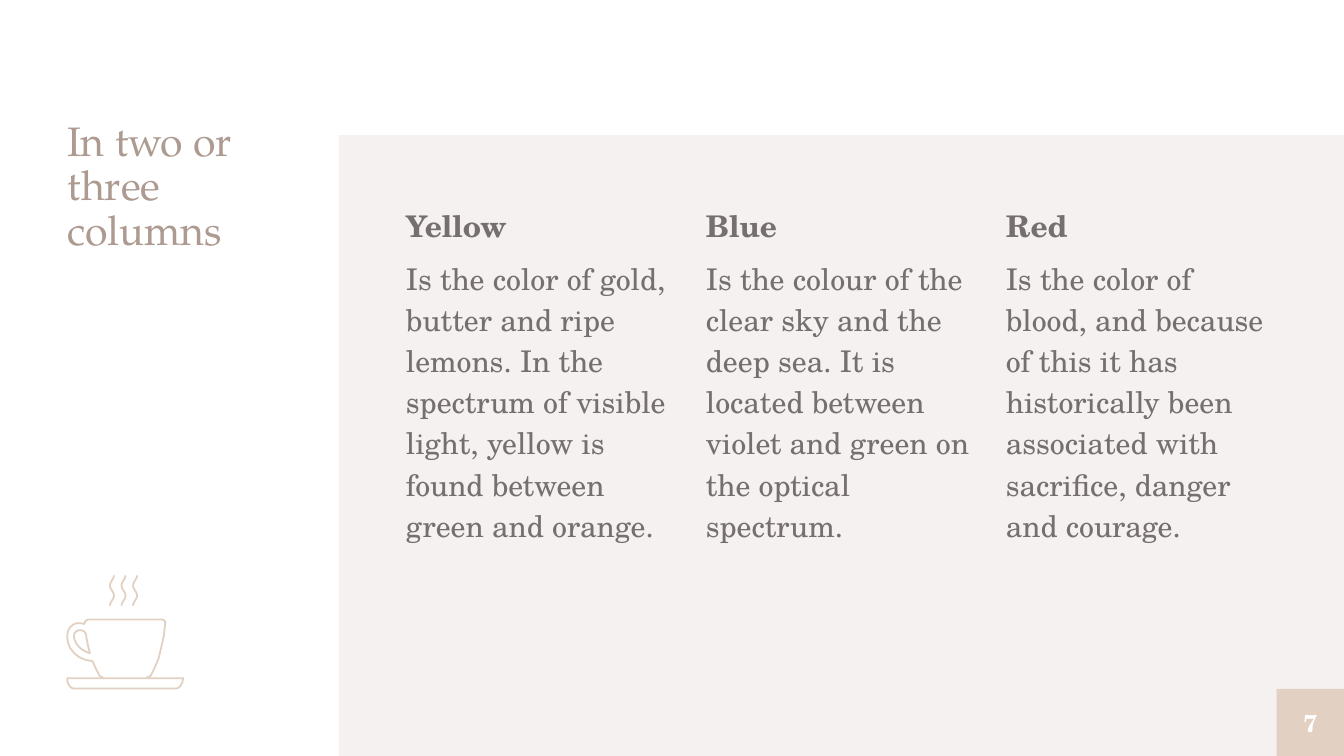
from math import cos, pi
from pptx import Presentation
from pptx.dml.color import RGBColor
from pptx.enum.shapes import MSO_SHAPE
from pptx.enum.text import MSO_ANCHOR, PP_ALIGN
from pptx.util import Pt

THEME = {
    "panel": RGBColor.from_string("F5F1F0"),
    "accent": RGBColor.from_string("E2D1C2"),
    "line": Pt(0.96),
    "title": {"name": "TeX Gyre Pagella", "size": Pt(22), "color": "AD9B91", "bold": False},
    "head": {"name": "TeX Gyre Schola", "size": Pt(16), "color": "756F6F", "bold": True},
    "body": {"name": "TeX Gyre Schola", "size": Pt(16), "color": "756F6F", "bold": False},
    "number": {"name": "TeX Gyre Schola", "size": Pt(13), "color": "FFFFFF", "bold": True},
}
BODY_PARA = {"line_spacing": 1.15, "space_before": Pt(6), "space_after": Pt(6)}
FRAME = {"margin_left": 0, "margin_top": 0, "margin_right": 0, "margin_bottom": 0, "word_wrap": True}

prs = Presentation()
prs.slide_width, prs.slide_height = Pt(720), Pt(405)
s = prs.slides.add_slide(prs.slide_layouts[6])


def write(sp, paragraphs):
    tf = sp.text_frame
    for key, value in FRAME.items():
        setattr(tf, key, value)
    for i, (text, style, layout) in enumerate(paragraphs):
        p = tf.add_paragraph() if i else tf.paragraphs[0]
        for key, value in layout.items():
            setattr(p, key, value)
        r = p.add_run()
        r.text = text
        for key, value in THEME[style].items():
            if key == "color":
                r.font.color.rgb = RGBColor.from_string(value)
            else:
                setattr(r.font, key, value)


def add_block(left, top, width, height, color):
    sp = s.shapes.add_shape(MSO_SHAPE.RECTANGLE, Pt(left), Pt(top), Pt(width), Pt(height))
    sp.shadow.inherit = False
    sp.fill.solid()
    sp.fill.fore_color.rgb = THEME[color]
    sp.line.fill.background()
    return sp


add_block(181.6, 72.4, 538.4, 332.6, "panel")

title = s.shapes.add_textbox(Pt(36), Pt(64.8), Pt(128.2), Pt(304.2))
write(title, [("In two or three columns", "title", {"line_spacing": 0.9})])

columns = [
    ("Yellow", "Is the color of gold, butter and ripe lemons. In the spectrum of visible light, yellow is found between green and orange."),
    ("Blue", "Is the colour of the clear sky and the deep sea. It is located between violet and green on the optical spectrum."),
    ("Red", "Is the color of blood, and because of this it has historically been associated with sacrifice, danger and courage."),
]
for i, (head, body) in enumerate(columns):
    sp = s.shapes.add_textbox(Pt(217.5 + 160.7 * i), Pt(108.6), Pt(145.2), Pt(260.4))
    write(sp, [(head, "head", {"line_spacing": 1.15}), (body, "body", BODY_PARA)])

number = add_block(684, 369, 36, 36, "accent")
number.text_frame.vertical_anchor = MSO_ANCHOR.MIDDLE
write(number, [("7", "number", {"alignment": PP_ALIGN.CENTER})])

cup = [
    (78.5, 362.9), (79.8, 362.7), (80.8, 362), (82.8, 358), (85, 352.8), (86.4, 347),
    (87.8, 340.6), (88.5, 334), (88.5, 333), (87.8, 332.2), (86.6, 331.9), (47.5, 331.9),
    (46.2, 332.4), (45.5, 333.3), (45.3, 334.3), (43.2, 333.9), (41, 333.9), (39.2, 334.7),
    (37.5, 336.2), (36.4, 338.3), (36, 341), (36.4, 344), (37.5, 347), (39.6, 349.7),
    (42.3, 352), (45.4, 353.4), (49.7, 354.3), (51.3, 358), (53.3, 361.9), (54.1, 362.7),
    (55.4, 362.9),
]
handle = [
    (39.6, 340.9), (39.9, 339.4), (40.8, 338.2), (42.1, 337.6), (43.6, 337.6), (45.3, 338.4),
    (46.1, 339.8), (46.4, 342), (47.3, 346.5), (48.2, 350), (46.4, 349.3), (44.3, 348.2),
    (42.2, 346.5), (40.8, 344.6), (39.9, 342.6), (39.6, 340.9),
]
saucer = [
    (94.5, 368.9), (39.6, 368.9), (38.2, 368.5), (37, 367.2), (36.2, 365.4), (36, 363.4),
    (98.2, 363.4), (97.8, 365.4), (96.9, 367.2), (95.8, 368.5), (94.5, 368.9),
]
steam = [
    [(x + 1.1 * (1 + cos(pi * i / 6)), 308.3 + 0.9 * i) for i in range(19)]
    for x in (58.9, 65.1, 71.3)
]
for points in [cup, handle, saucer, *steam]:
    vertices = [(Pt(x), Pt(y)) for x, y in points]
    builder = s.shapes.build_freeform(*vertices[0])
    builder.add_line_segments(vertices[1:], close=points is saucer)
    sp = builder.convert_to_shape()
    sp.shadow.inherit = False
    sp.fill.background()
    sp.line.color.rgb = THEME["accent"]
    sp.line.width = THEME["line"]

prs.save("out.pptx")
